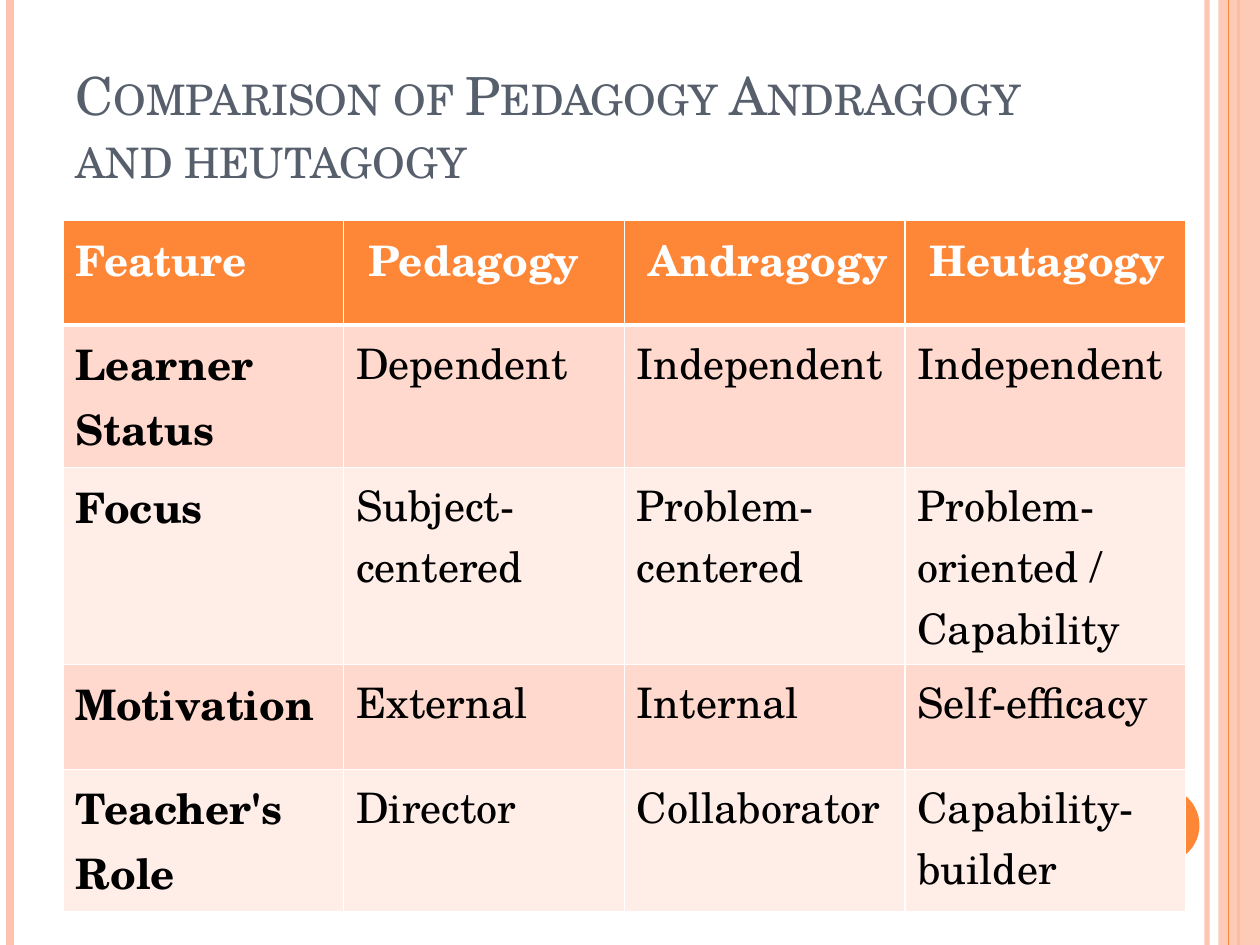
import pptx
import pptx.util
import pptx.dml.color
import pptx.enum.shapes
import pptx.enum.text
import pptx.oxml
import pptx.oxml.ns
from dataclasses import dataclass

Inches = pptx.util.Inches
Pt = pptx.util.Pt
SHAPE = pptx.enum.shapes.MSO_SHAPE
TITLE_ONLY = 5


@dataclass(frozen=True)
class Theme:
    face: str = "TeX Gyre Schola"
    head: int = 30
    cell: int = 24
    slate: str = "575F6D"
    orange: str = "FE8637"
    peach: str = "FEC3AE"
    bands: tuple = ("FFD9CE", "FFEDE8")
    white: str = "FFFFFF"
    black: str = "000000"


def color(code):
    return pptx.dml.color.RGBColor.from_string(code)


def write(frame, text, face, size, ink, bold=False, small=False):
    """Put one formatted run of text in a frame."""
    para = frame.paragraphs[0]
    para.alignment = pptx.enum.text.PP_ALIGN.LEFT
    run = para.add_run()
    run.text = text
    font = run.font
    font.name, font.size, font.bold = face, Pt(size), bold
    font.color.rgb = color(ink)
    if small:
        run._r.get_or_add_rPr().set("cap", "small")


def fade(part, alpha):
    """Set the opacity, in percent, of the solid fill inside a part."""
    for tone in part.iter(pptx.oxml.ns.qn("a:srgbClr")):
        pptx.oxml.ns  # namespace of the child below
        tone.append(pptx.oxml.parse_xml(
            f'<a:alpha {pptx.oxml.ns.nsdecls("a")} val="{alpha * 1000}"/>'))


class Deck:
    def __init__(self, theme):
        self.theme = theme
        self.show = pptx.Presentation()
        self.show.slide_width = Inches(10)
        self.show.slide_height = Inches(7.5)
        self.slide = self.show.slides.add_slide(
            self.show.slide_layouts[TITLE_ONLY])

    def title(self, text, left, top, width, height):
        box = self.slide.shapes.title
        box.left, box.top = Inches(left), Inches(top)
        box.width, box.height = Inches(width), Inches(height)
        frame = box.text_frame
        frame.word_wrap = True
        frame.auto_size = pptx.enum.text.MSO_AUTO_SIZE.NONE
        frame.vertical_anchor = pptx.enum.text.MSO_ANCHOR.BOTTOM
        write(frame, text, self.theme.face, self.theme.head,
              self.theme.slate, small=True)

    def stripe(self, x, ink, weight, alpha=100):
        line = self.slide.shapes.add_connector(
            pptx.enum.shapes.MSO_CONNECTOR.STRAIGHT,
            Inches(x), 0, Inches(x), self.show.slide_height)
        line.line.color.rgb = color(ink)
        line.line.width = Pt(weight)
        props = line._element.spPr
        if alpha < 100:
            fade(props, alpha)
        props.append(pptx.oxml.parse_xml(
            f'<a:effectLst {pptx.oxml.ns.nsdecls("a")}/>'))

    def shape(self, kind, left, top, width, height, ink, alpha=100):
        form = self.slide.shapes.add_shape(
            kind, Inches(left), Inches(top), Inches(width), Inches(height))
        form.shadow.inherit = False
        form.fill.solid()
        form.fill.fore_color.rgb = color(ink)
        form.line.fill.background()
        if alpha < 100:
            fade(form._element.spPr, alpha)

    def border(self, cell, under):
        """Rule all four sides in white, with its own weight below."""
        props = cell._tc.get_or_add_tcPr()
        sides = {"lnL": 1, "lnR": 1, "lnT": 1, "lnB": under}
        for spot, (side, weight) in enumerate(sides.items()):
            props.insert(spot, pptx.oxml.parse_xml(
                f'<a:{side} {pptx.oxml.ns.nsdecls("a")} w="{Pt(weight)}">'
                f'<a:solidFill><a:srgbClr val="{self.theme.white}"/>'
                f'</a:solidFill></a:{side}>'))

    def table(self, rows, tall, left, top, width):
        theme = self.theme
        count = len(rows[0])
        grid = self.slide.shapes.add_table(
            len(rows), count, Inches(left), Inches(top),
            Inches(width), Inches(sum(tall))).table
        grid.horz_banding = False
        for col in grid.columns:
            col.width = Inches(width / count)
        for r, texts in enumerate(rows):
            grid.rows[r].height = Inches(tall[r])
            top_row = r == 0
            for c, text in enumerate(texts):
                cell = grid.cell(r, c)
                cell.fill.solid()
                cell.fill.fore_color.rgb = color(
                    theme.orange if top_row else theme.bands[(r - 1) % 2])
                self.border(cell, under=3 if top_row else 1)
                if r == 1:
                    # the heavy rule is shared with the header row
                    cell._tc.tcPr.find(pptx.oxml.ns.qn("a:lnT")).set(
                        "w", str(Pt(3)))
                write(cell.text_frame, text, theme.face, theme.cell,
                      theme.white if top_row else theme.black,
                      bold=top_row or c == 0)


def main():
    theme = Theme()
    deck = Deck(theme)

    # Side stripes and disc
    deck.stripe(9.58, theme.peach, 3, alpha=93)
    deck.stripe(0.08, theme.peach, 4.5)
    deck.stripe(9.83, theme.orange, 1.5)
    deck.shape(SHAPE.RECTANGLE, 9.67, 0, 0.33, 7.5, theme.peach, alpha=87)
    deck.stripe(9.75, theme.orange, 0.75)
    deck.shape(SHAPE.OVAL, 8.92, 6.25, 0.6, 0.6, theme.orange)

    # Heading
    deck.title("Comparison of Pedagogy Andragogy and heutagogy",
               0.5, 0.3, 8.17, 1.25)

    # Comparison table
    rows = [
        ("Feature", " Pedagogy", " Andragogy", " Heutagogy"),
        ("Learner Status", "Dependent", "Independent", "Independent"),
        ("Focus", "Subject-centered", "Problem-centered",
         "Problem-oriented / Capability"),
        ("Motivation", "External", "Internal", "Self-efficacy"),
        ("Teacher's Role", "Director", "Collaborator", "Capability-builder"),
    ]
    deck.table(rows, (0.83, 1.01, 1.46, 0.83, 1.01), 0.5, 1.75, 8.91)

    deck.show.save("out.pptx")


if __name__ == "__main__":
    main()
